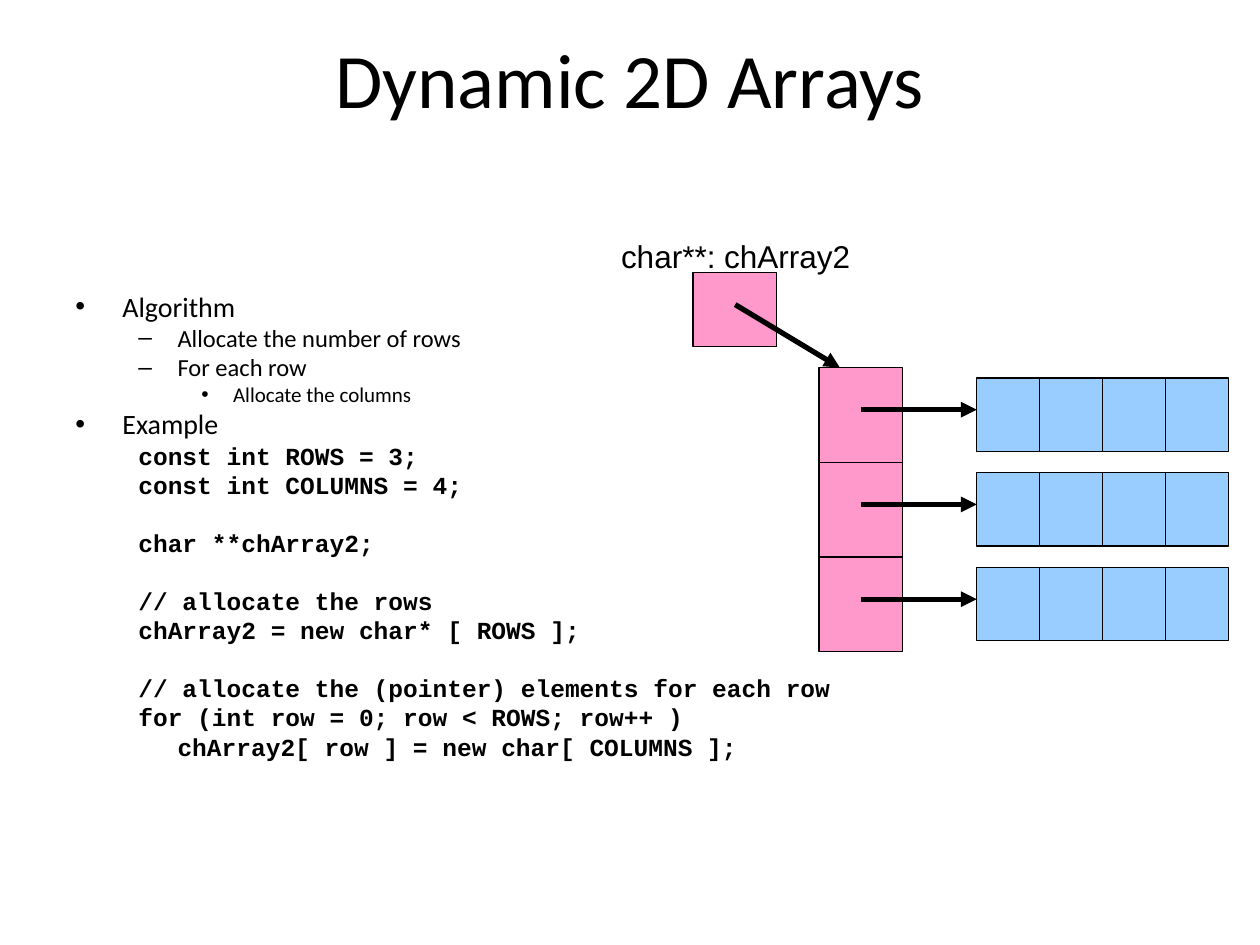
"""Build a slide that shows how a dynamic 2D array is allocated."""
from dataclasses import dataclass

from lxml import etree
from pptx import Presentation
from pptx import util as u
from pptx.dml.color import RGBColor
from pptx.enum import shapes, text
from pptx.oxml import ns


@dataclass(frozen=True)
class Theme:
    ink: str = "000000"
    pink: str = "FF99CC"
    blue: str = "99CCFF"
    body: str = "Calibri"
    label: str = "Arial"
    code: str = "Courier New"
    title: int = 44
    tag: int = 18
    sizes: tuple = (16, 14, 12)
    thin: float = 0.75
    thick: float = 3


LEFT = (0.95, 2.06, 3.18)
HANG = (0.95, 0.79, 0.64)
MARKS = "•–•"
POINTS = (
    (0, "Algorithm"),
    (1, "Allocate the number of rows"),
    (1, "For each row"),
    (2, "Allocate the columns"),
    (0, "Example"),
)
CODE = (
    ("const int ROWS = 3;", "const int COLUMNS = 4;"),
    ("char **chArray2;",),
    ("// allocate the rows", "chArray2 = new char* [ ROWS ];"),
    (
        "// allocate the (pointer) elements for each row",
        "for (int row = 0; row < ROWS; row++ )",
        "\tchArray2[ row ] = new char[ COLUMNS ];",
    ),
)


def assign(item, form):
    for key, val in form.items():
        setattr(item, key, val)


def add(node, tag, **attrs):
    return etree.SubElement(node, ns.qn(tag), attrs)


class Deck:
    def __init__(self, theme):
        self.theme = theme
        self.file = Presentation()
        assign(self.file, {"slide_width": u.Cm(25.4), "slide_height": u.Cm(19.05)})
        self.slide = self.file.slides.add_slide(self.file.slide_layouts[6])

    def frame(self, *box, **form):
        shape = self.slide.shapes.add_textbox(*map(u.Cm, box))
        assign(shape.text_frame, {"word_wrap": True, **form})
        return shape.text_frame

    def line(self, para, words, font, size, bold=False, **form):
        run = para.add_run()
        run.text = words
        assign(run.font, {"name": font, "size": u.Pt(size), "bold": bold})
        run.font.color.rgb = RGBColor.from_string(self.theme.ink)
        assign(para, form)

    def item(self, para, level, words, code=False, gap=0.0):
        size = self.theme.sizes[level]
        font = self.theme.code if code else self.theme.body
        self.line(para, words, font, size, code, level=level,
                  line_spacing=0.8, space_before=u.Pt(gap))
        props = para._p.get_or_add_pPr()
        props.set("marL", str(u.Cm(LEFT[level])))
        props.set("indent", str(-u.Cm(HANG[level])))
        if code:
            add(props, "a:buNone")
        else:
            add(props, "a:buFont", typeface=self.theme.label)
            add(props, "a:buChar", char=MARKS[level])

    def cell(self, fill, *box):
        rect = shapes.MSO_SHAPE.RECTANGLE
        shape = self.slide.shapes.add_shape(rect, *map(u.Cm, box))
        shape.shadow.inherit = False
        shape.fill.solid()
        shape.fill.fore_color.rgb = RGBColor.from_string(fill)
        self.stroke(shape.line, self.theme.thin)

    def stroke(self, line, width):
        line.width = u.Pt(width)
        line.color.rgb = RGBColor.from_string(self.theme.ink)

    def arrow(self, *ends):
        kind = shapes.MSO_CONNECTOR.STRAIGHT
        link = self.slide.shapes.add_connector(kind, *map(u.Cm, ends))
        self.stroke(link.line, self.theme.thick)
        add(link.line._get_or_add_ln(), "a:tailEnd", type="triangle")
        add(link._element.spPr, "a:effectLst")


def main():
    theme = Theme()
    deck = Deck(theme)
    head = deck.frame(1.27, 0.58, 22.86, 1.96,
                      vertical_anchor=text.MSO_ANCHOR.MIDDLE)
    deck.line(head.paragraphs[0], "Dynamic 2D Arrays", theme.body, theme.title,
              alignment=text.PP_ALIGN.CENTER)

    body = deck.frame(1.27, 5.84, 22.86, 11.18)
    for num, (level, words) in enumerate(POINTS):
        para = body.add_paragraph() if num else body.paragraphs[0]
        deck.item(para, level, words, gap=0.24 * theme.sizes[level] if num else 0)
    for part, lines in enumerate(CODE):
        for num, words in enumerate(lines):
            gap = 19.6 if part and not num else 3.4
            deck.item(body.add_paragraph(), 1, words, True, gap)

    deck.cell(theme.pink, 13.97, 5.5, 1.69, 1.48)
    tag = deck.frame(12.27, 4.66, 5.5, 1.02)
    deck.line(tag.paragraphs[0], "char**: chArray2", theme.label, theme.tag)
    for row in range(3):
        drop = 1.91 * row
        deck.cell(theme.pink, 16.51, 7.41 + drop, 1.69, 1.91)
        for col in range(4):
            deck.cell(theme.blue, 19.69 + 1.27 * col, 7.62 + drop, 1.27, 1.48)
        deck.arrow(17.35, 8.26 + drop, 19.69, 8.26 + drop)
    deck.arrow(14.82, 6.14, 16.93, 7.41)
    deck.file.save("out.pptx")


if __name__ == "__main__":
    main()
